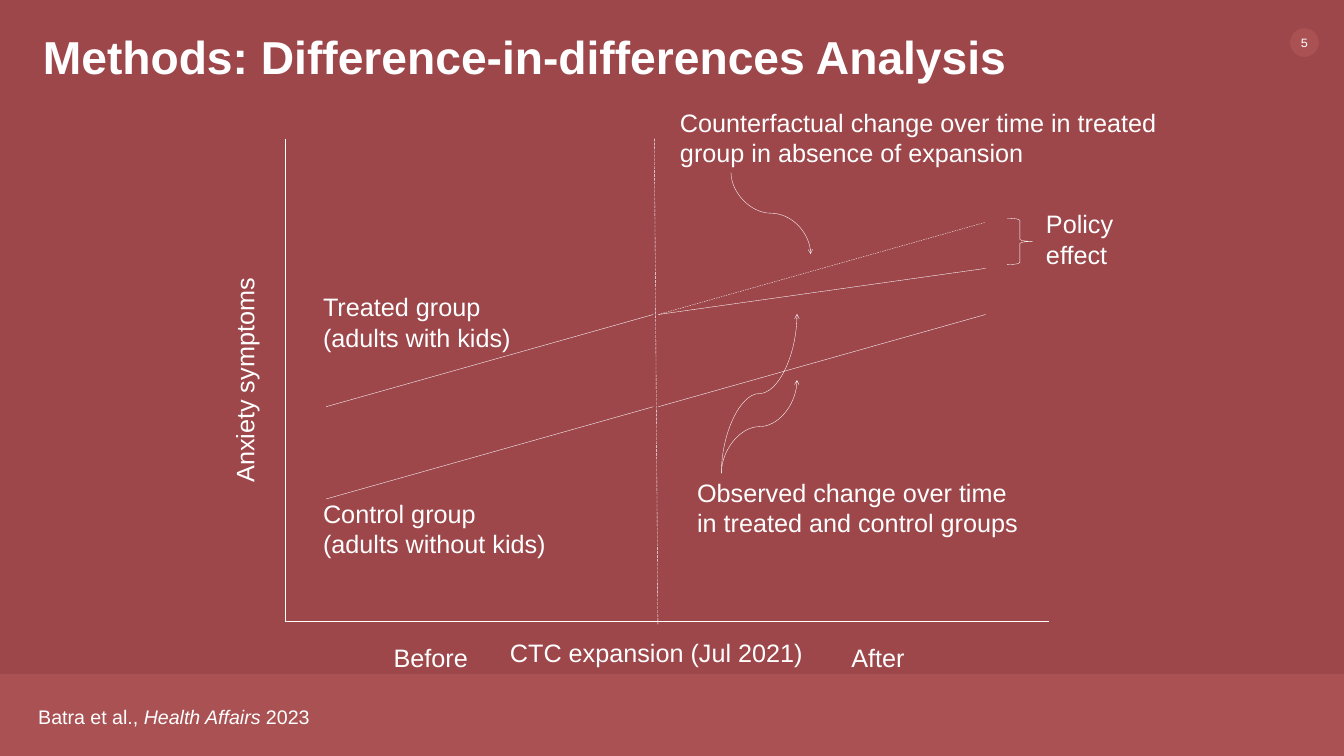
"""Build the difference-in-differences methods slide."""
import pptx
import pptx.util
import pptx.dml.color
import pptx.enum.dml
import pptx.enum.shapes
import pptx.enum.text
import pptx.oxml
import pptx.oxml.ns

W, H = 26.66, 15
COLORS = {"bg": "9D474B", "accent": "B55A5A", "ink": "FFFFFF"}
FONT = "Arial"
TITLE = "Methods: Difference-in-differences Analysis"
TITLE_BOX = (0.75, 0.58, 20.45, 1.14)
BADGE = (25.59, 0.56, 0.57)
BAND_H = 1.63
BRACE = (19.98, 4.33, 0.5, 0.92)
ONE, TWO = 0.71, 1.31

LABELS = [
    (["CTC expansion (Jul 2021)"], (9.47, 12.59, 7.1, ONE), {"align": "CENTER", "wrap": True}),
    (["Before"], (7.71, 12.69, 1.69, ONE), {}),
    (["After"], (16.79, 12.69, 1.27, ONE), {}),
    (["Anxiety symptoms"], (2.7, 7.17, 4.3, ONE), {"rotation": 270}),
    (["Treated group", "(adults with kids)"], (6.31, 5.74, 3.96, TWO), {}),
    (["Control group", "(adults without kids)"], (6.31, 9.84, 4.66, TWO), {}),
    (["Policy", "effect"], (20.65, 4.09, 1.55, TWO), {}),
    (["Observed change over time", "in treated and control groups"],
     (13.73, 9.42, 6.63, TWO), {}),
    (["Counterfactual change over time in treated group in absence of expansion"],
     (13.39, 2.08, 10.19, TWO), {"wrap": True}),
]
SOURCE = [("Batra et al., ", False), ("Health Affairs ", True), ("2023", False)]

ORIGIN, AXIS_TOP, AXIS_RIGHT = (5.65, 12.33), 2.75, 20.81
AXES = [
    ((ORIGIN[0], AXIS_TOP), ORIGIN, None),
    (ORIGIN, (AXIS_RIGHT, ORIGIN[1]), None),
    ((12.98, AXIS_TOP), (13.05, 12.39), "LONG_DASH"),
]
BEFORE, AFTER, RUN = 6.47, 13.06, 6.49
BASE, RISE = 9.9, 1.83
TRENDS = [
    (BEFORE, 1, 2, None),
    (BEFORE, 0, 1, None),
    (AFTER, 1, 2, None),
    (AFTER, 2, 3, "DASH"),
    (AFTER, 2, 2.5, None),
]
CALLOUTS = [
    ((14.31, 9.39), (15.81, 6.23)),
    ((14.31, 9.39), (15.81, 7.54)),
    ((14.5, 3.42), (16.08, 5.04)),
]


def rgb(name):
    return pptx.dml.color.RGBColor.from_string(COLORS[name])


def inches(values):
    return [pptx.util.Inches(v) for v in values]


def style_run(r, size, **extra):
    values = {"name": FONT, "size": pptx.util.Pt(size), **extra}
    for key, value in values.items():
        setattr(r.font, key, value)
    r.font.color.rgb = rgb("ink")


def add_text(s, paragraphs, box, size=36, align="LEFT", wrap=False, rotation=0, **extra):
    sp = s.shapes.add_textbox(*inches(box))
    sp.rotation = rotation
    tf = sp.text_frame
    tf.word_wrap = wrap
    tf.auto_size = pptx.enum.text.MSO_AUTO_SIZE.SHAPE_TO_FIT_TEXT
    for i, runs in enumerate(paragraphs):
        p = tf.add_paragraph() if i else tf.paragraphs[0]
        p.alignment = pptx.enum.text.PP_ALIGN[align]
        for text, italic in runs:
            r = p.add_run()
            r.text = text
            style_run(r, size, italic=italic, **extra)


def add_tint(s, shape, box):
    sp = s.shapes.add_shape(pptx.enum.shapes.MSO_SHAPE[shape], *inches(box))
    sp.shadow.inherit = False
    sp.fill.solid()
    sp.fill.fore_color.rgb = rgb("accent")
    color = sp.fill._xPr.find(".//" + pptx.oxml.ns.qn("a:srgbClr"))
    add_xml(color, "alpha", 'val="55000"')
    sp.line.fill.background()


def add_xml(parent, tag, attributes=""):
    ns = pptx.oxml.ns.nsdecls("a")
    parent.append(pptx.oxml.parse_xml(f"<a:{tag} {ns} {attributes}/>"))


def style_line(sp):
    sp.line.color.rgb = rgb("ink")
    sp.line.width = pptx.util.Pt(0.5)


def add_line(s, start, end, dash=None, kind="STRAIGHT", arrow=False):
    cx = s.shapes.add_connector(
        pptx.enum.shapes.MSO_CONNECTOR[kind], *inches((*start, *end)))
    style_line(cx)
    if dash:
        cx.line.dash_style = pptx.enum.dml.MSO_LINE[dash]
    if arrow:
        add_xml(cx.line._get_or_add_ln(), "tailEnd", 'type="arrow"')
    add_xml(cx._element.spPr, "effectLst")
    return cx


def add_callout(s, start, end):
    (x0, y0), (x1, y1) = start, end
    mx, my = (x0 + x1) / 2, (y0 + y1) / 2
    up = y1 < y0
    u = abs(y1 - y0) / 2
    v = (x1 - x0) / 2 * (1 if up else -1)
    cx = add_line(s, (mx + u, my + v), (mx - u, my - v), kind="CURVE", arrow=True)
    xfrm = cx._element.spPr.find(pptx.oxml.ns.qn("a:xfrm"))
    xfrm.set("rot", str((90 if up else 270) * 60000))


def add_title(s):
    sp = s.shapes.title
    for key, value in zip(("left", "top", "width", "height"), inches(TITLE_BOX)):
        setattr(sp, key, value)
    tf = sp.text_frame
    tf.word_wrap = True
    tf.auto_size = pptx.enum.text.MSO_AUTO_SIZE.NONE
    tf.vertical_anchor = pptx.enum.text.MSO_ANCHOR.BOTTOM
    p = tf.paragraphs[0]
    p.alignment = pptx.enum.text.PP_ALIGN.LEFT
    p.line_spacing = 0.9
    r = p.add_run()
    r.text = TITLE
    style_run(r, 66, bold=True)


def main():
    prs = pptx.Presentation()
    prs.slide_width, prs.slide_height = inches((W, H))
    s = prs.slides.add_slide(prs.slide_layouts[5])
    s.background.fill.solid()
    s.background.fill.fore_color.rgb = rgb("bg")
    add_title(s)

    x, y, d = BADGE
    add_tint(s, "RECTANGLE", (0, H - BAND_H, W, BAND_H))
    add_tint(s, "OVAL", (x, y, d, d))
    add_text(s, [[("5", False)]], (x, y + 0.08, d, 0.4), size=18, align="CENTER",
             name="Courier New")

    for start, end, dash in AXES:
        add_line(s, start, end, dash)
    for x, low, high, dash in TRENDS:
        add_line(s, (x, BASE - low * RISE), (x + RUN, BASE - high * RISE), dash)
    for start, end in CALLOUTS:
        add_callout(s, start, end)

    brace = s.shapes.add_shape(pptx.enum.shapes.MSO_SHAPE.RIGHT_BRACE, *inches(BRACE))
    brace.shadow.inherit = False
    brace.fill.background()
    style_line(brace)

    for lines, box, options in LABELS:
        add_text(s, [[(line, False)] for line in lines], box, **options)
    add_text(s, [SOURCE], (0.66, 13.93, 5.65, 0.57), size=28)
    prs.save("out.pptx")


if __name__ == "__main__":
    main()
